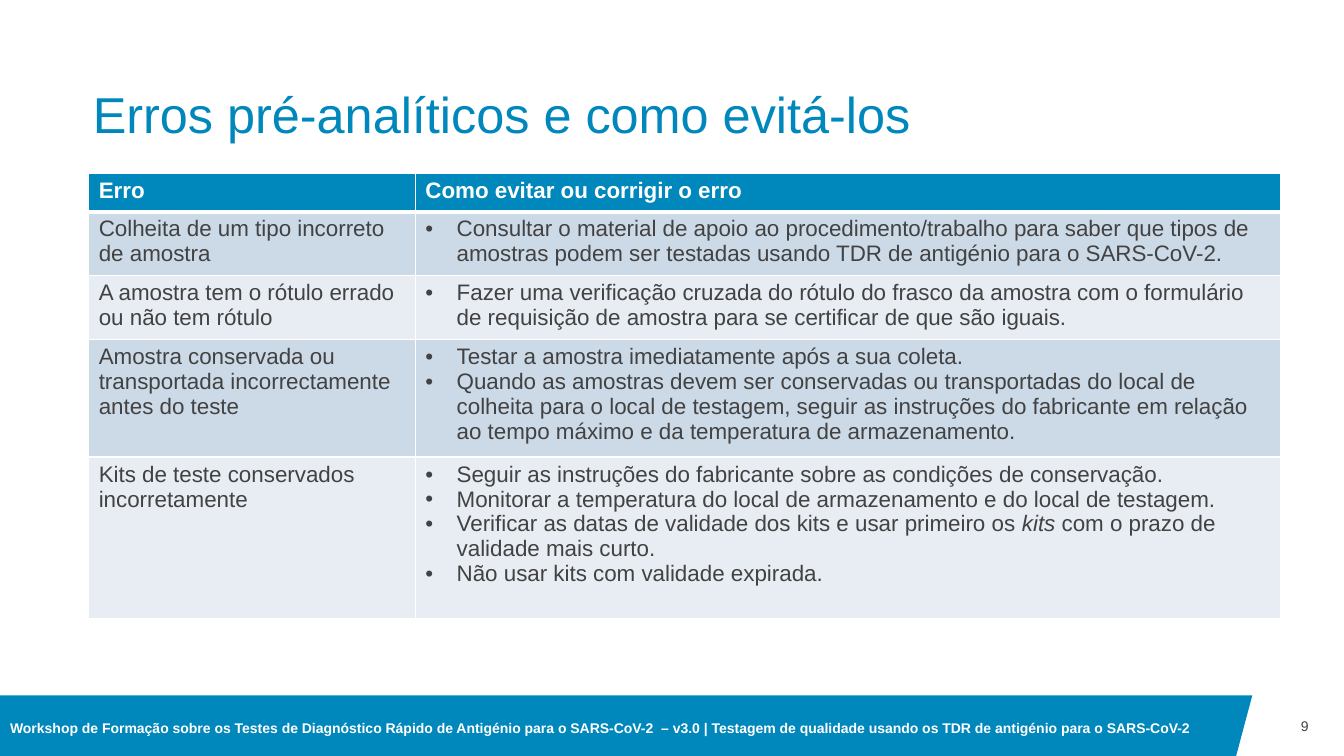
from lxml import etree
from pptx import Presentation
from pptx.dml.color import RGBColor
from pptx.enum.text import MSO_ANCHOR, PP_ALIGN
from pptx.oxml.ns import qn
from pptx.util import Inches, Pt

LEFT, RIGHT = PP_ALIGN.LEFT, PP_ALIGN.RIGHT
TOP, MIDDLE, BOTTOM = MSO_ANCHOR.TOP, MSO_ANCHOR.MIDDLE, MSO_ANCHOR.BOTTOM
WIDTH, HEIGHT = 13.33, 7.5
BLUE, GREY, WHITE = "0087BC", "424242", "FFFFFF"
BANDS = ("CCD9E7", "E7EDF3")
BULLET_INDENT = 0.31
COLUMN_WIDTHS = (3.24, 8.58)
ROW_HEIGHTS = (0.38, 0.59, 0.6, 1.08, 1.6)

TITLE = "Erros pré-analíticos e como evitá-los"
HEADINGS = ("Erro", "Como evitar ou corrigir o erro")
ERRORS = [
    ("Colheita de um tipo incorreto de amostra", [
        "Consultar o material de apoio ao procedimento/trabalho para saber que tipos de "
        "amostras podem ser testadas usando TDR de antigénio para o SARS-CoV-2."]),
    ("A amostra tem o rótulo errado ou não tem rótulo", [
        "Fazer uma verificação cruzada do rótulo do frasco da amostra com o formulário "
        "de requisição de amostra para se certificar de que são iguais."]),
    ("Amostra conservada ou transportada incorrectamente antes do teste", [
        "Testar a amostra imediatamente após a sua coleta.",
        "Quando as amostras devem ser conservadas ou transportadas do local de colheita "
        "para o local de testagem, seguir as instruções do fabricante em relação ao "
        "tempo máximo e da temperatura de armazenamento."]),
    ("Kits de teste conservados incorretamente", [
        "Seguir as instruções do fabricante sobre as condições de conservação.",
        "Monitorar a temperatura do local de armazenamento e do local de testagem.",
        ("Verificar as datas de validade dos kits e usar primeiro os ", "kits",
         " com o prazo de validade mais curto."),
        "Não usar kits com validade expirada."]),
]
WORKSHOP = ("Workshop de Formação sobre os Testes de Diagnóstico Rápido de Antigénio para o "
            "SARS-CoV-2  – v3.0 | Testagem de qualidade usando os TDR de antigénio para o "
            "SARS-CoV-2")
PAGE = "9"


def color(hex_code):
    """Turn a hex string into a colour."""
    return RGBColor.from_string(hex_code)


def write(frame, paragraphs, size=16, ink=GREY, bold=False, align=LEFT, anchor=TOP,
          spacing=None, bullets=False, inset=None):
    """Fill a text frame; in a tuple paragraph every second run is italic."""
    frame.word_wrap = True
    frame.vertical_anchor = anchor
    if inset is not None:
        frame.margin_left = frame.margin_right = Inches(inset)
        frame.margin_top = frame.margin_bottom = Inches(inset)
    lines = [paragraphs] if isinstance(paragraphs, str) else paragraphs
    for index, line in enumerate(lines):
        paragraph = frame.add_paragraph() if index else frame.paragraphs[0]
        paragraph.alignment = align
        if spacing:
            paragraph.line_spacing = spacing
        if bullets:
            add_bullet(paragraph)
        for position, words in enumerate([line] if isinstance(line, str) else line):
            run = paragraph.add_run()
            run.text = words
            run.font.name = "Arial"
            run.font.size = Pt(size)
            run.font.bold = bold
            run.font.italic = position % 2 == 1
            run.font.color.rgb = color(ink)


def add_bullet(paragraph):
    """Give a paragraph a hanging bullet."""
    properties = paragraph._p.get_or_add_pPr()
    properties.set("marL", str(Inches(BULLET_INDENT)))
    properties.set("indent", str(-Inches(BULLET_INDENT)))
    etree.SubElement(properties, qn("a:buFont")).set("typeface", "Arial")
    etree.SubElement(properties, qn("a:buChar")).set("char", "•")


def add_borders(cell, **widths):
    """Draw white borders on a cell, with widths in points by side."""
    properties = cell._tc.get_or_add_tcPr()
    for side in "LRTB":
        border = etree.SubElement(properties, qn(f"a:ln{side}"))
        border.set("w", str(Pt(widths.get(side, 1))))
        fill = etree.SubElement(border, qn("a:solidFill"))
        etree.SubElement(fill, qn("a:srgbClr")).set("val", WHITE)


def fill_cell(cell, text, fill, borders=None, **style):
    """Write, outline and colour one table cell."""
    write(cell.text_frame, text, **style)
    cell.vertical_anchor = TOP
    add_borders(cell, **(borders or {}))
    cell.fill.solid()
    cell.fill.fore_color.rgb = color(fill)


def place_title(slide, left, top, width, height):
    """Place the title in its box."""
    title = slide.shapes.title
    title.left, title.top = Inches(left), Inches(top)
    title.width, title.height = Inches(width), Inches(height)
    write(title.text_frame, TITLE, size=36, ink=BLUE, anchor=BOTTOM, spacing=0.9, inset=0)


def place_errors(slide, left, top):
    """Place the table of errors and remedies from its top left corner."""
    size = sum(COLUMN_WIDTHS), sum(ROW_HEIGHTS)
    table = slide.shapes.add_table(len(ROW_HEIGHTS), len(COLUMN_WIDTHS),
                                   *map(Inches, (left, top, *size))).table
    for column, width in zip(table.columns, COLUMN_WIDTHS):
        column.width = Inches(width)
    for row, height in zip(table.rows, ROW_HEIGHTS):
        row.height = Inches(height)
    for column, heading in enumerate(HEADINGS):
        fill_cell(table.cell(0, column), heading, BLUE, {"B": 3}, ink=WHITE, bold=True)
    for row, (error, remedies) in enumerate(ERRORS, start=1):
        band = BANDS[(row - 1) % 2]
        borders = {"T": 3} if row == 1 else None
        fill_cell(table.cell(row, 0), error, band, borders)
        fill_cell(table.cell(row, 1), remedies, band, borders, bullets=True)


def add_label(slide, text, left, top, width, height, **style):
    """Add a text box without insets, centred vertically."""
    label = slide.shapes.add_textbox(*map(Inches, (left, top, width, height)))
    write(label.text_frame, text, size=10, anchor=MIDDLE, inset=0, **style)


def place_footer(slide, top, width, height):
    """Place the slanted footer band, the workshop name and the page number."""
    bottom, slant = top + height, 0.16
    outline = slide.shapes.build_freeform(0, Inches(top))
    corners = [(width, top), (width - slant, bottom), (0, bottom)]
    outline.add_line_segments([(Inches(x), Inches(y)) for x, y in corners], close=True)
    band = outline.convert_to_shape()
    band.shadow.inherit = False
    band.fill.solid()
    band.fill.fore_color.rgb = color(BLUE)
    band.line.fill.background()
    add_label(slide, WORKSHOP, 0.1, top + 0.05, width - 0.54, height - 0.05,
              ink=WHITE, bold=True)
    add_label(slide, PAGE, width, top, 0.56, height, align=RIGHT)


def main():
    """Build the slide and save it."""
    deck = Presentation()
    deck.slide_width, deck.slide_height = Inches(WIDTH), Inches(HEIGHT)
    slide = deck.slides.add_slide(deck.slide_layouts[5])
    place_footer(slide, 6.9, 12.42, HEIGHT - 6.9)
    place_title(slide, 0.92, 0.4, 11.5, 1.03)
    place_errors(slide, 0.88, 1.72)
    deck.save("out.pptx")


if __name__ == "__main__":
    main()
